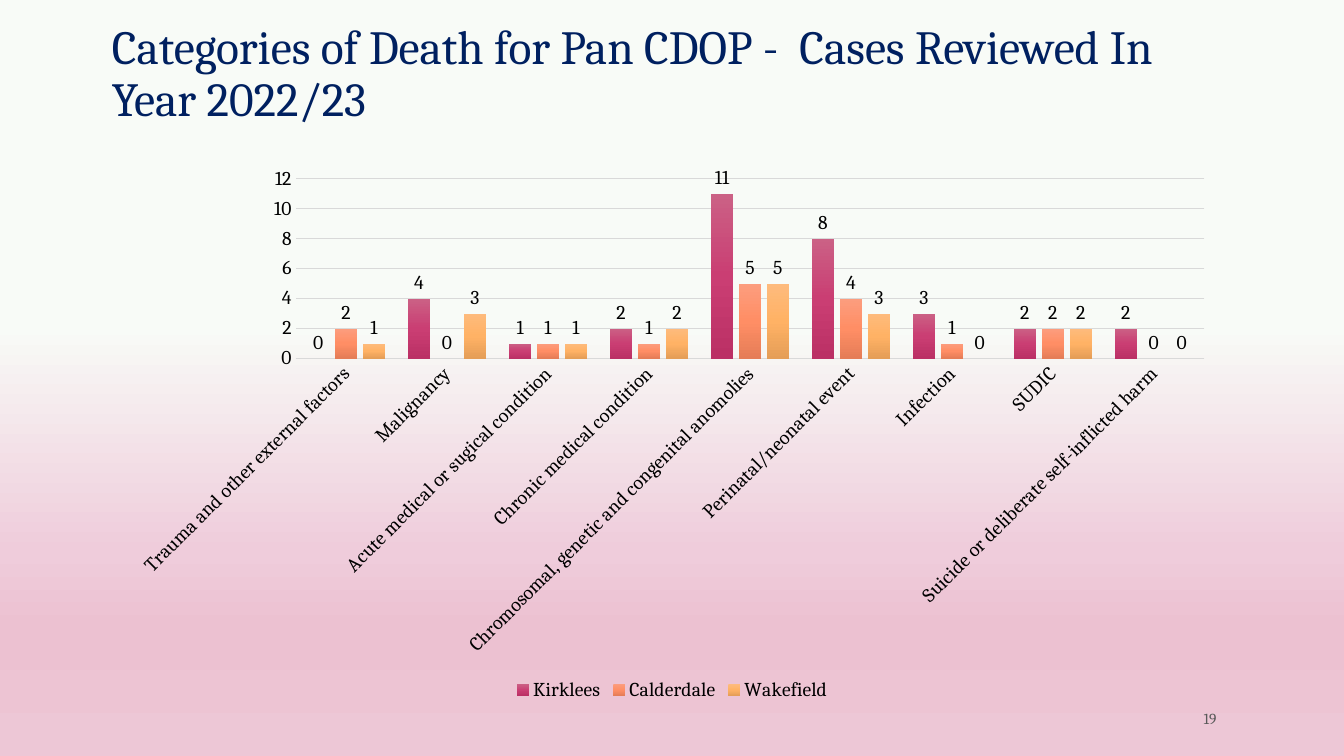
"""Builds the slide on categories of death reviewed by the Pan CDOP in 2022/23."""
from pptx import Presentation
from pptx.chart.data import CategoryChartData
from pptx.dml.color import RGBColor
from pptx.enum.chart import XL_CHART_TYPE as CT, XL_LABEL_POSITION as LP
from pptx.enum.chart import XL_LEGEND_POSITION as LEG, XL_TICK_MARK as TICK
from pptx.enum.text import MSO_ANCHOR as ANCHOR, PP_ALIGN as ALIGN
from pptx.oxml import parse_xml
from pptx.oxml.ns import nsdecls
from pptx.util import Cm, Pt

FONT = "Cambria"
COLORS = {"title": "002060", "text": "000000", "muted": "595959", "grid": "D9D9D9"}
BACKGROUND = [(43, "F8FBF7"), (73, "EFCCDB"), (83, "ECC1D1"), (100, "EDC7D6")]
CATEGORIES = [
    "Trauma and other external factors",
    "Malignancy",
    "Acute medical or sugical condition",
    "Chronic medical condition",
    "Chromosomal, genetic and congenital anomolies",
    "Perinatal/neonatal event",
    "Infection",
    "SUDIC",
    "Suicide or deliberate self-inflicted harm",
]
AREAS = [
    ("Kirklees", (0, 4, 1, 2, 11, 8, 3, 2, 2), ("CB6185", "CA3E73", "BB3065")),
    ("Calderdale", (2, 0, 1, 1, 5, 4, 1, 2, 0), ("FC9D7E", "FF8E65", "E57D57")),
    ("Wakefield", (1, 3, 1, 2, 5, 3, 0, 2, 0), ("FEBB7D", "FFB265", "E59E57")),
]
TEXTS = [
    ("Categories of Death for Pan CDOP -  Cases Reviewed In Year 2022/23",
     (2.57, 0.64, 28.35, 2.67), 34, "title", ANCHOR.BOTTOM, ALIGN.LEFT, 0.9),
    ("19", (27.86, 17.78, 3.05, 0.64), 11, "muted", ANCHOR.MIDDLE, ALIGN.RIGHT, 1.0),
]


def style_font(font, size, color):
    font.name = FONT
    font.size = Pt(size)
    font.bold = False
    font.color.rgb = RGBColor.from_string(COLORS[color])


def apply_gradient(fill, parent, stops):
    fill.solid()
    solid = parent.xpath("./a:solidFill")[0]
    gs = "".join(f'<a:gs pos="{pos * 1000}"><a:srgbClr val="{rgb}"/></a:gs>' for pos, rgb in stops)
    grad = parse_xml(f'<a:gradFill {nsdecls("a")} rotWithShape="1"><a:gsLst>{gs}</a:gsLst>'
                     '<a:lin ang="5400000" scaled="0"/></a:gradFill>')
    parent.replace(solid, grad)


prs = Presentation()
prs.slide_width, prs.slide_height = Cm(33.87), Cm(19.05)
s = prs.slides.add_slide(prs.slide_layouts[6])
bg_fill = s.background.fill
apply_gradient(bg_fill, s.element.xpath("./p:cSld/p:bg/p:bgPr")[0], BACKGROUND)

for text, box, size, color, anchor, align, spacing in TEXTS:
    tf = s.shapes.add_textbox(*map(Cm, box)).text_frame
    tf.word_wrap = True
    tf.vertical_anchor = anchor
    tf.text = text
    p = tf.paragraphs[0]
    p.alignment = align
    p.line_spacing = spacing
    style_font(p.runs[0].font, size, color)

data = CategoryChartData()
data.categories = CATEGORIES
for name, values, shades in AREAS:
    data.add_series(name, values)
chart = s.shapes.add_chart(CT.COLUMN_CLUSTERED, Cm(2.97), Cm(3.94), Cm(27.94), Cm(13.84), data).chart
chart.has_title = False
style_font(chart.font, 14, "muted")
chart.has_legend = True
chart.legend.position = LEG.BOTTOM
chart.legend.include_in_layout = False
style_font(chart.legend.font, 14, "text")

cat_axis, val_axis = chart.category_axis, chart.value_axis
for axis in (cat_axis, val_axis):
    axis.major_tick_mark = axis.minor_tick_mark = TICK.NONE
    style_font(axis.tick_labels.font, 14, "text")
val_axis.minimum_scale, val_axis.maximum_scale, val_axis.major_unit = 0, 12, 2
val_axis.format.line.fill.background()
for line in (cat_axis.format.line, val_axis.major_gridlines.format.line):
    line.color.rgb = RGBColor.from_string(COLORS["grid"])
    line.width = Pt(0.75)

plot = chart.plots[0]
plot.gap_width, plot.overlap = 100, -24
plot.vary_by_categories = False
for ser, (name, values, shades) in zip(plot.series, AREAS):
    ser.invert_if_negative = False
    ser_fill = ser.format.fill
    apply_gradient(ser_fill, ser.format.element.xpath("./c:spPr")[0] if hasattr(ser.format, "element")
                   else ser._element.xpath("./c:spPr")[0], zip((0, 50, 100), shades))
    labels = ser.data_labels
    labels.show_value = True
    labels.position = LP.OUTSIDE_END
    style_font(labels.font, 14, "text")

prs.save("out.pptx")
